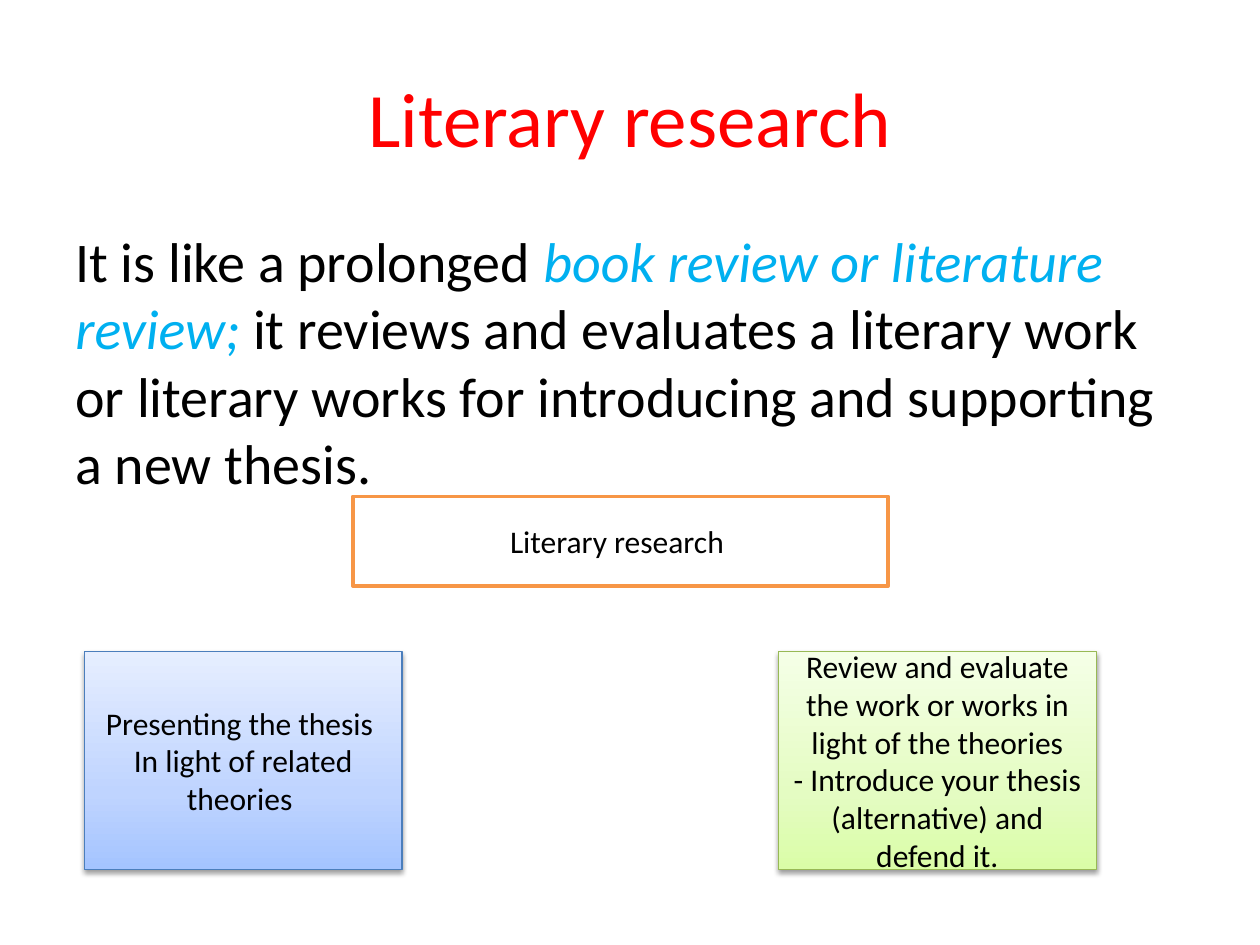
from copy import deepcopy
from dataclasses import dataclass
from lxml.etree import SubElement
from pptx import Presentation
from pptx.dml.color import RGBColor as Rgb
from pptx.enum.shapes import MSO_SHAPE as Shape
from pptx.enum.text import MSO_ANCHOR as Anchor, PP_ALIGN as Align
from pptx.oxml.ns import qn
from pptx.util import Inches, Pt

COLS, ROWS = 100, 75
WIDE, HIGH = Inches(10), Inches(7.5)


@dataclass(frozen=True)
class Theme:
    font: str = "Calibri"
    title: int = 44
    body: int = 32
    label: int = 18
    red: str = "FF0000"
    cyan: str = "00B0F0"
    ink: str = "000000"
    paper: str = "FFFFFF"
    orange: str = "F79646"
    blue: tuple = ("4B7EBC", "A4C4FF", "BFD4FF", "E6EEFF")
    green: tuple = ("98B955", "DAFDA7", "E4FCC2", "F5FFE7")


THEME = Theme()


def place(col, row, cols, rows):
    wide, high = WIDE / COLS, HIGH / ROWS
    return [round(n) for n in (col * wide, row * high, cols * wide, rows * high)]


def write(frame, paras, size, color=THEME.ink, align=Align.CENTER, anchor=Anchor.MIDDLE):
    frame.word_wrap = True
    frame.vertical_anchor = anchor
    for n, runs in enumerate(paras):
        para = frame.add_paragraph() if n else frame.paragraphs[0]
        para.alignment = align
        for text, tint in [(runs, color)] if isinstance(runs, str) else runs:
            run = para.add_run()
            run.text = text
            font = run.font
            font.name, font.size = THEME.font, Pt(size)
            font.color.rgb = Rgb.from_string(tint)
            font.italic = tint == THEME.cyan


def add_box(slide, area, paras, edge, width):
    box = slide.shapes.add_shape(Shape.RECTANGLE, *place(*area))
    box.shadow.inherit = False
    box.fill.solid()
    box.fill.fore_color.rgb = Rgb.from_string(THEME.paper)
    box.line.color.rgb = Rgb.from_string(edge)
    box.line.width = Pt(width)
    write(box.text_frame, paras, THEME.label)
    return box


def shade(box, tints):
    box.fill.gradient()
    box.fill.gradient_angle = 90
    stops = box.element.find(".//" + qn("a:gsLst"))
    stops.append(deepcopy(stops[0]))
    for stop, tint, spot in zip(box.fill.gradient_stops, tints, (0, 0.35, 1)):
        stop.color.rgb = Rgb.from_string(tint)
        stop.position = spot


def cast(box):
    group = box.element.spPr.find(qn("a:effectLst"))
    drop = SubElement(group, qn("a:outerShdw"), blurRad=str(Pt(3.1)),
                      dist=str(Pt(1.6)), dir="5400000", rotWithShape="0")
    tint = SubElement(drop, qn("a:srgbClr"), val=THEME.ink)
    SubElement(tint, qn("a:alpha"), val="38000")


def add_card(slide, col, paras, tints):
    edge, *fills = tints
    box = add_box(slide, (col, 51.7, 25.2, 17.3), paras, edge, 0.75)
    shade(box, fills)
    cast(box)


def add_title(slide, text):
    title = slide.shapes.title
    title.left, title.top, title.width, title.height = place(5, 3, 90, 12.5)
    write(title.text_frame, [text], THEME.title, color=THEME.red)


def add_body(slide, runs):
    body = slide.shapes.add_textbox(*place(5, 17.5, 90, 49.5))
    write(body.text_frame, [runs], THEME.body, align=Align.LEFT, anchor=Anchor.TOP)


def main():
    deck = Presentation()
    deck.slide_width, deck.slide_height = WIDE, HIGH
    slide = deck.slides.add_slide(deck.slide_layouts.get_by_name("Title Only"))
    add_title(slide, "Literary research")
    add_body(slide, [
        ("It is like a prolonged ", THEME.ink),
        ("book review or literature review; ", THEME.cyan),
        ("it reviews and evaluates a literary work or literary works "
         "for introducing and supporting a new thesis.", THEME.ink),
    ])
    add_box(slide, (28, 39.4, 42.5, 7.1), ["Literary research "], THEME.orange, 2)
    add_card(slide, 6.7, ["Presenting the thesis ", "In light of related theories "], THEME.blue)
    add_card(slide, 61.8, [
        "Review and evaluate the work or works in light of the theories",
        "- Introduce your thesis (alternative) and defend it.",
    ], THEME.green)
    deck.save("out.pptx")


if __name__ == "__main__":
    main()
